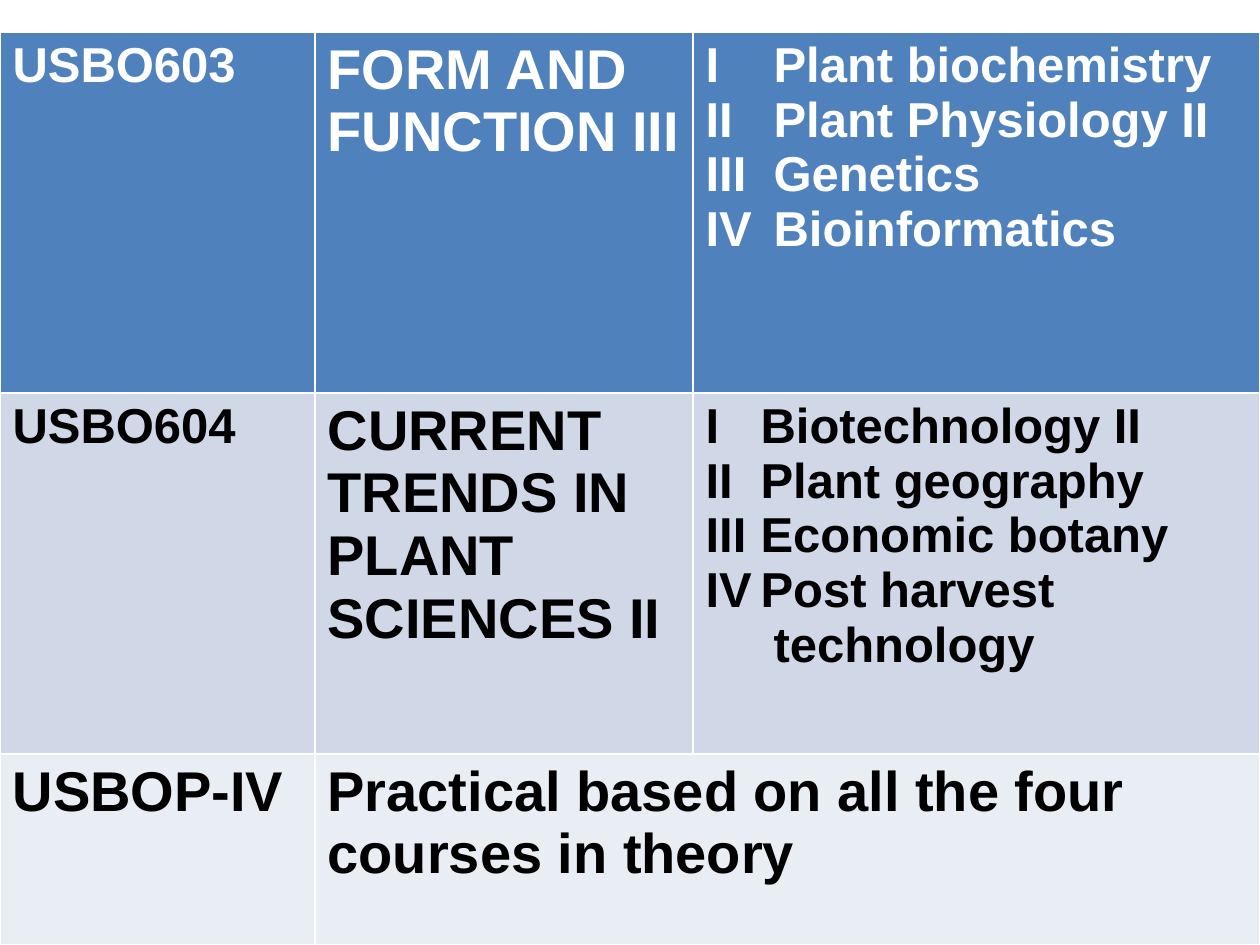
from pptx import Presentation
from pptx.dml.color import RGBColor
from pptx.util import Pt

PX = 914400 / 126  # EMU in one px


def px(length):
    return round(length * PX)


def color(hex_string):
    return RGBColor.from_string(hex_string)


presentation = Presentation()
presentation.slide_width = px(1260)
presentation.slide_height = px(945)
slide = presentation.slides.add_slide(presentation.slide_layouts[6])

# Course rows: height, fill, font colour, then (size, hanging indent, lines) per cell
column_widths = [315, 378, 567]
course_rows = [
    (361, "4F81BD", "FFFFFF", [
        (28, 0, ["USBO603"]),
        (32, 0, ["FORM AND FUNCTION III"]),
        (28, 68, ["I\tPlant biochemistry", "II\tPlant Physiology II",
                  "III\tGenetics", "IV\tBioinformatics"]),
    ]),
    (361, "D0D8E8", "000000", [
        (28, 0, ["USBO604"]),
        (32, 0, ["CURRENT TRENDS IN", "PLANT SCIENCES II"]),
        (28, 55, ["I\tBiotechnology II", "II\tPlant geography",
                  "III\tEconomic botany", "IV\tPost harvest", "technology"]),
    ]),
    (191, "E9EDF4", "000000", [
        (32, 0, ["USBOP-IV"]),
        (32, 0, ["Practical based on all the four", "courses in theory"]),
    ]),
]

# Table: the default style draws the white borders
table = slide.shapes.add_table(
    len(course_rows), len(column_widths),
    px(0), px(32), px(sum(column_widths)), px(sum(row[0] for row in course_rows)),
).table
for column, width in zip(table.columns, column_widths):
    column.width = px(width)
table.cell(2, 1).merge(table.cell(2, 2))

# Cells
for row_index, (height, fill, font_color, contents) in enumerate(course_rows):
    table.rows[row_index].height = px(height)
    for column_index, (size, indent, lines) in enumerate(contents):
        cell = table.cell(row_index, column_index)
        cell.fill.solid()
        cell.fill.fore_color.rgb = color(fill)
        cell.text = "\n".join(lines)
        for paragraph in cell.text_frame.paragraphs:
            font = paragraph.font
            font.name = "Arial"
            font.size = Pt(size)
            font.bold = True
            font.color.rgb = color(font_color)
            if indent:
                # Unit numbers hang; a continued line is set in a little further
                properties = paragraph._p.get_or_add_pPr()
                if "\t" in paragraph.text:
                    properties.set("marL", str(px(indent)))
                    properties.set("indent", str(-px(indent)))
                else:
                    properties.set("marL", str(px(68)))
                    properties.set("indent", "0")

presentation.save("out.pptx")
